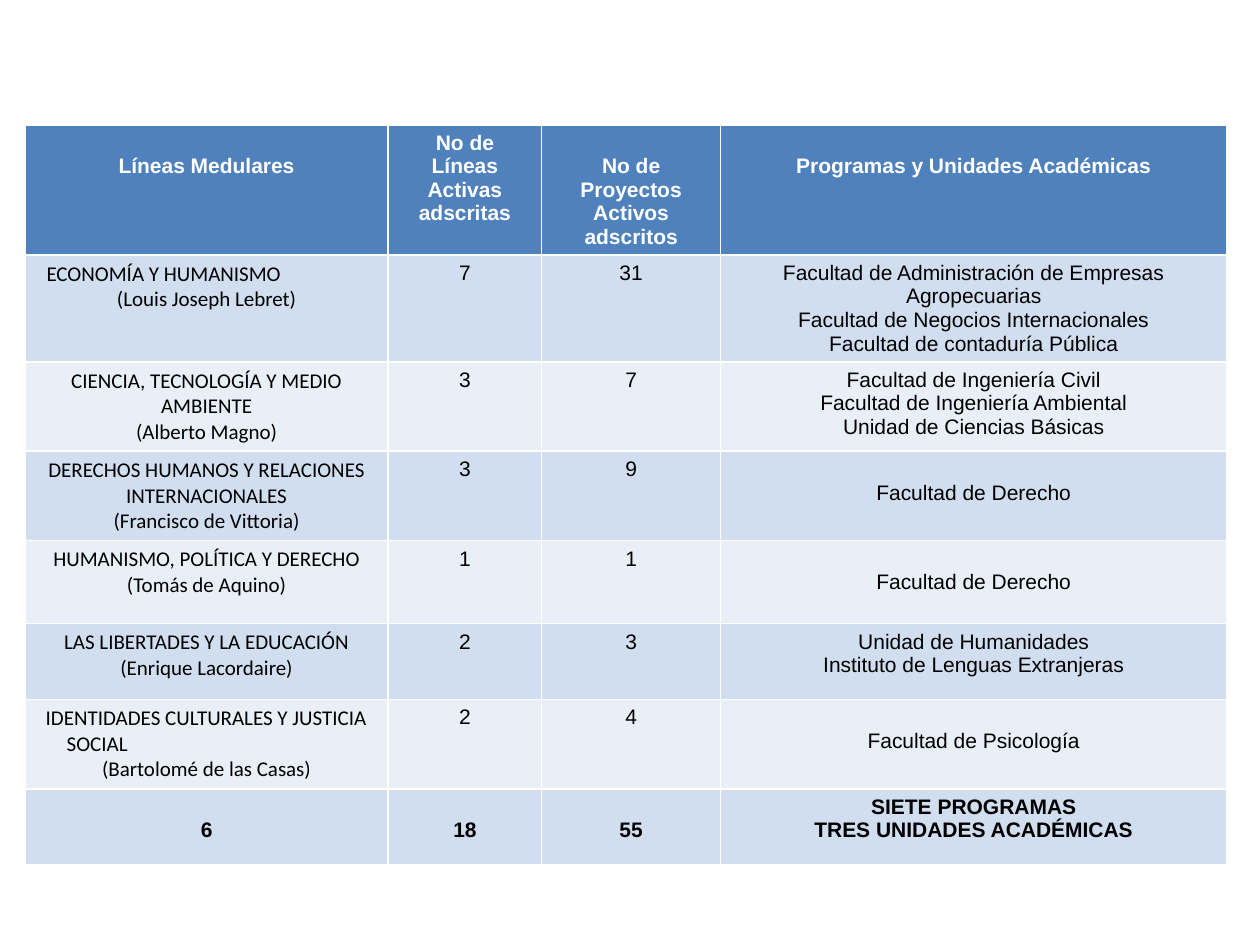
from pptx import Presentation
from pptx.dml.color import RGBColor
from pptx.enum.text import PP_ALIGN
from pptx.util import Pt

BLUE = RGBColor(0x4F, 0x81, 0xBD)
DARK_BAND = RGBColor(0xD0, 0xDE, 0xEF)
LIGHT_BAND = RGBColor(0xE9, 0xEF, 0xF7)
WHITE = RGBColor(0xFF, 0xFF, 0xFF)
BLACK = RGBColor(0, 0, 0)

COLUMN_WIDTHS = [207.4, 87.8, 102.2, 289.4]
ROW_HEIGHTS = [74, 61, 51, 51, 47.5, 43.2, 51, 43.2]
TOP_MARGIN = 3.6
LINE_HEIGHT = 13.5

# Each cell is a list of paragraphs
ROWS = [
    [["Líneas Medulares"], ["No de Líneas Activas adscritas"],
     ["No de Proyectos Activos adscritos"], ["Programas y Unidades Académicas"]],
    [["ECONOMÍA Y HUMANISMO", "(Louis Joseph Lebret)"], ["7"], ["31"],
     ["Facultad de Administración de Empresas Agropecuarias",
      "Facultad de Negocios Internacionales", "Facultad de contaduría Pública"]],
    [["CIENCIA, TECNOLOGÍA Y MEDIO AMBIENTE", "(Alberto Magno)"], ["3"], ["7"],
     ["Facultad de Ingeniería Civil", "Facultad de Ingeniería Ambiental",
      "Unidad de Ciencias Básicas"]],
    [["DERECHOS HUMANOS Y RELACIONES INTERNACIONALES", "(Francisco de Vittoria)"],
     ["3"], ["9"], ["Facultad de Derecho"]],
    [["HUMANISMO, POLÍTICA Y DERECHO", "(Tomás de Aquino)"], ["1"], ["1"],
     ["Facultad de Derecho"]],
    [["LAS LIBERTADES Y LA EDUCACIÓN", "(Enrique Lacordaire)"], ["2"], ["3"],
     ["Unidad de Humanidades", "Instituto de Lenguas Extranjeras"]],
    [["IDENTIDADES CULTURALES Y JUSTICIA SOCIAL", "(Bartolomé de las Casas)"],
     ["2"], ["4"], ["Facultad de Psicología"]],
    [["6"], ["18"], ["55"], ["SIETE PROGRAMAS", "TRES UNIDADES ACADÉMICAS"]],
]
TOTAL_ROW = len(ROWS) - 1

# Cells whose text starts one line lower
LOWERED = {(0, 0), (0, 2), (0, 3), (3, 3), (4, 3), (6, 3),
           (TOTAL_ROW, 0), (TOTAL_ROW, 1), (TOTAL_ROW, 2)}
# Left-aligned line names: left margin and first-line indent
LEFT_INDENTS = {1: (5, 0), 6: (16.5, -12)}


def fill_cell(cell, row, column, lines):
    is_header = row == 0
    is_line_name = column == 0 and 0 < row < TOTAL_ROW
    cell.fill.solid()
    cell.fill.fore_color.rgb = BLUE if is_header else DARK_BAND if row % 2 else LIGHT_BAND
    cell.margin_top = Pt(TOP_MARGIN + LINE_HEIGHT * ((row, column) in LOWERED))

    for index, line in enumerate(lines):
        frame = cell.text_frame
        para = frame.add_paragraph() if index else frame.paragraphs[0]
        para.text = line
        para.alignment = PP_ALIGN.CENTER
        if is_line_name and index == 0 and row in LEFT_INDENTS:
            para.alignment = PP_ALIGN.LEFT
            margin, indent = LEFT_INDENTS[row]
            properties = para._p.get_or_add_pPr()
            properties.set("marL", str(Pt(margin)))
            properties.set("indent", str(Pt(indent)))
        para.font.name = "Calibri" if is_line_name else "Arial"
        para.font.size = Pt(12)
        para.font.bold = row in (0, TOTAL_ROW)
        para.font.color.rgb = WHITE if is_header else BLACK


def add_research_table(page, left, top, width, height):
    table = page.shapes.add_table(len(ROWS), len(COLUMN_WIDTHS),
                                  left, top, width, height).table
    for column, column_width in zip(table.columns, COLUMN_WIDTHS):
        column.width = Pt(column_width)
    for row, row_height in zip(table.rows, ROW_HEIGHTS):
        row.height = Pt(row_height)
    for row, cells in enumerate(ROWS):
        for column, lines in enumerate(cells):
            fill_cell(table.cell(row, column), row, column, lines)


def main():
    deck = Presentation()
    deck.slide_width, deck.slide_height = Pt(720), Pt(540)
    page = deck.slides.add_slide(deck.slide_layouts[6])
    add_research_table(page, Pt(14.4), Pt(71.3),
                       Pt(sum(COLUMN_WIDTHS)), Pt(sum(ROW_HEIGHTS)))
    deck.save("out.pptx")


if __name__ == "__main__":
    main()
